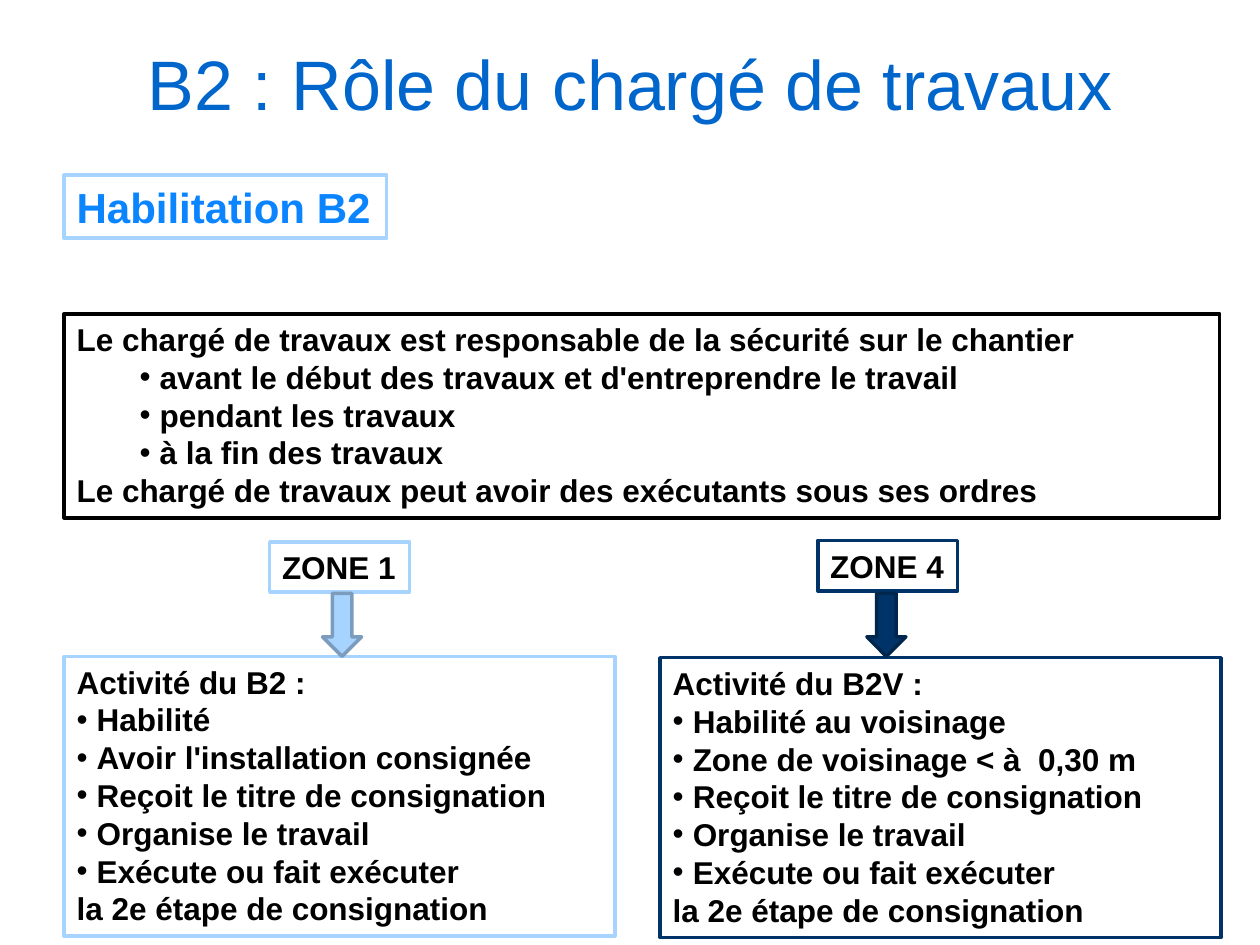
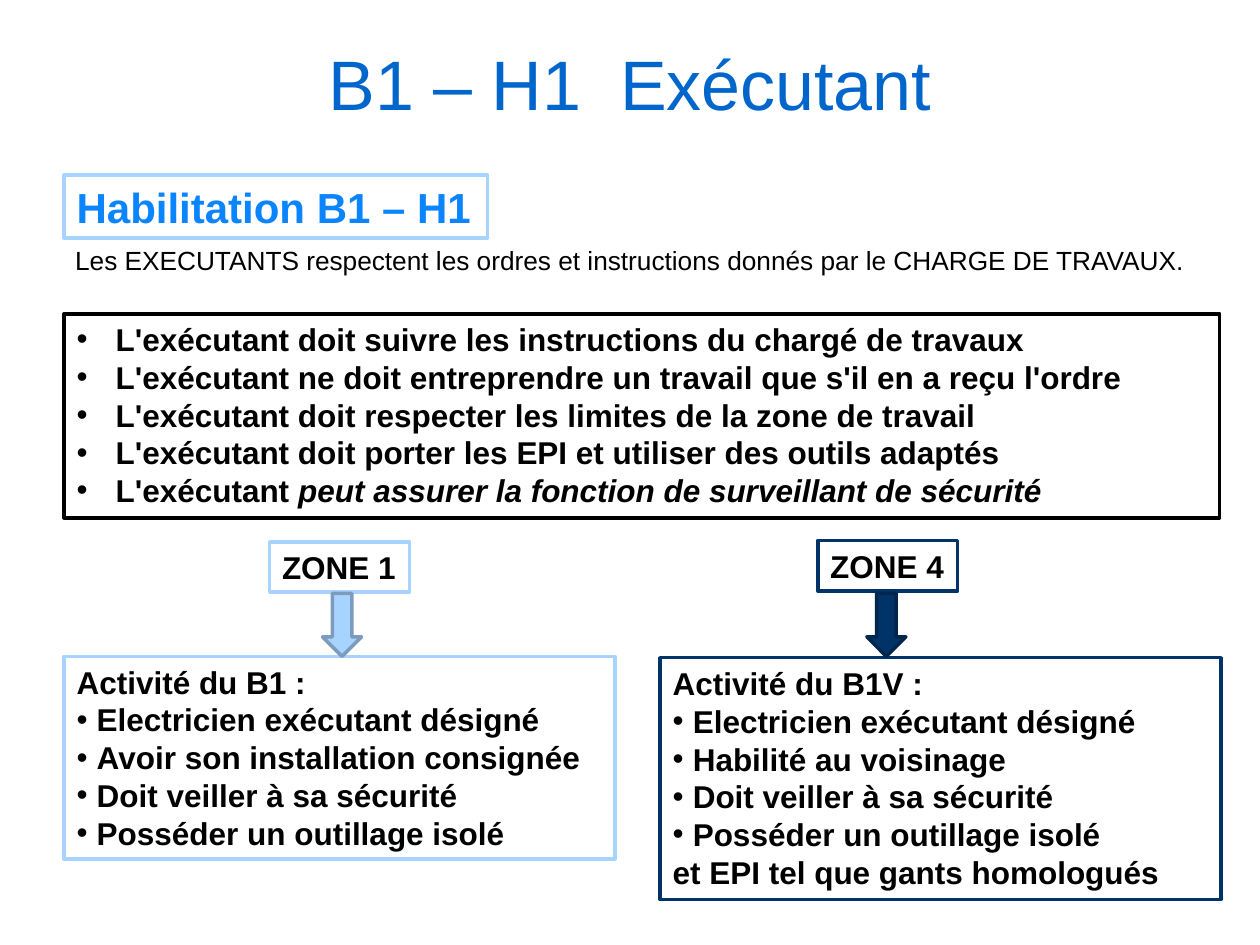
from lxml import etree
from pptx import Presentation
from pptx import util as u
from pptx.dml.color import RGBColor
from pptx.enum import shapes, text
from pptx.oxml import ns

COLORS = {
    "title": "0066CC", "heading": "0B85FF", "text": "000000", "fill": "FFFFFF",
    "zone1": "A7D3FF", "zone1_edge": "7C9CBD",
    "zone4": "003468", "zone4_edge": "00264D",
}
FONTS = {
    "title": {"size": u.Pt(40), "bold": False},
    "heading": {"size": u.Pt(24), "bold": True},
    "text": {"size": u.Pt(18), "bold": True},
    "note": {"size": u.Pt(15), "bold": False},
}
BULLETS = {"tight": (0.16, 0.16), "nested": (0.66, 0.16), "wide": (0.31, 0.31)}
LEFT, RIGHT = 0.51, 5.24
MIDDLE_LEFT = text.PP_ALIGN.LEFT


def rgb(name):
    return RGBColor.from_string(COLORS[name])


def apply(target, values):
    for name, value in values.items():
        setattr(target, name, value)


def place(sp, at):
    apply(sp, dict(zip(("left", "top", "width", "height"), map(u.Inches, at))))


def set_bullet(p, kind):
    pPr = p._p.get_or_add_pPr()
    margin, hanging = BULLETS.get(kind, (0, 0))
    pPr.set("marL", str(u.Inches(margin)))
    pPr.set("indent", str(-u.Inches(hanging)))
    if kind:
        etree.SubElement(pPr, ns.qn("a:buFont"), typeface="Arial")
        etree.SubElement(pPr, ns.qn("a:buChar"), char="•")
    else:
        etree.SubElement(pPr, ns.qn("a:buNone"))


def write(tf, lines, font="text", color="text", align=MIDDLE_LEFT):
    for i, (kind, *runs) in enumerate(lines):
        p = tf.paragraphs[0] if i == 0 else tf.add_paragraph()
        set_bullet(p, kind)
        apply(p, {"alignment": align, "space_before": u.Pt(0)})
        for n, content in enumerate(runs):
            r = p.add_run()
            r.text = content
            apply(r.font, {"name": "Arial", "italic": n > 0, **FONTS[font]})
            r.font.color.rgb = rgb(color)


def plain(content):
    return (None, content)


def listed(kind, *items):
    return [(kind, item) for item in items]


def shape(s, preset, at, fill, line):
    sp = s.shapes.add_shape(preset, *map(u.Inches, at))
    sp.shadow.inherit = False
    sp.fill.solid()
    sp.fill.fore_color.rgb = rgb(fill)
    sp.line.color.rgb = rgb(line)
    sp.line.width = u.Pt(2)
    return sp


def box(s, at, lines, line, font="text", color="text", wrap=True):
    sp = shape(s, shapes.MSO_SHAPE.RECTANGLE, at, "fill", line)
    tf = sp.text_frame
    apply(tf, {"word_wrap": wrap, "vertical_anchor": text.MSO_ANCHOR.TOP,
               "auto_size": text.MSO_AUTO_SIZE.SHAPE_TO_FIT_TEXT})
    write(tf, lines, font, color)


def add_slide(prs, layout, title, heading, heading_width, duties):
    s = prs.slides.add_slide(prs.slide_layouts[layout])
    place(s.shapes.title, (0.5, 0.08, 9, 1.15))
    tf = s.shapes.title.text_frame
    tf.vertical_anchor = text.MSO_ANCHOR.MIDDLE
    write(tf, [plain(title)], "title", "title", text.PP_ALIGN.CENTER)
    box(s, (LEFT, 1.39, heading_width, 0.5), [plain(heading)],
        "zone1", "heading", "heading", wrap=False)
    box(s, (LEFT, 2.49, 9.17, 1.62), duties, "text")
    return s


def note(s, content):
    sp = s.placeholders[1]
    place(sp, (0, 1.89, 10, 0.5))
    write(sp.text_frame, [plain(content)], "note", align=text.PP_ALIGN.CENTER)


def zone(s, number, label_at, arrow_left, activity_at, lines):
    name = f"zone{number}"
    height = 0.1 + 0.303 * len(lines)
    box(s, (*activity_at, round(height, 2)), lines, name)
    box(s, (*label_at, 1.11, 0.4), [plain(f"ZONE {number}")], name, wrap=False)
    shape(s, shapes.MSO_SHAPE.DOWN_ARROW, (arrow_left, 4.71, 0.31, 0.5),
          name, f"{name}_edge")


def zones(s, first, fourth):
    zone(s, 1, (2.14, 4.3), 2.56, (LEFT, 5.21, 4.37), first)
    zone(s, 4, (6.49, 4.29), 6.88, (RIGHT, 5.22, 4.45), fourth)


def charge_slide(prs):
    s = add_slide(prs, 5, "B2 : Rôle du chargé de travaux", "Habilitation B2", 2.56, [
        plain("Le chargé de travaux est responsable de la sécurité sur le chantier"),
        *listed("nested", "avant le début des travaux et d'entreprendre le travail",
                "pendant les travaux", "à la fin des travaux"),
        plain("Le chargé de travaux peut avoir des exécutants sous ses ordres"),
    ])
    shared = [
        *listed("tight", "Reçoit le titre de consignation", "Organise le travail",
                "Exécute ou fait exécuter"),
        plain("la 2e étape de consignation"),
    ]
    zones(s,
          [plain("Activité du B2 :"),
           *listed("tight", "Habilité", "Avoir l'installation consignée"), *shared],
          [plain("Activité du B2V :"),
           *listed("tight", "Habilité au voisinage", "Zone de voisinage < à  0,30 m"),
           *shared])


def executant_slide(prs):
    s = add_slide(prs, 1, "B1 – H1  Exécutant", "Habilitation B1 – H1", 3.36, [
        *listed("wide", "L'exécutant doit suivre les instructions du chargé de travaux",
                "L'exécutant ne doit entreprendre un travail que s'il en a reçu l'ordre",
                "L'exécutant doit respecter les limites de la zone de travail",
                "L'exécutant doit porter les EPI et utiliser des outils adaptés"),
        ("wide", "L'exécutant ", "peut assurer la fonction de surveillant de sécurité"),
    ])
    note(s, "Les EXECUTANTS respectent les ordres et instructions donnés "
            "par le CHARGE DE TRAVAUX.")
    designated = listed("tight", "Electricien exécutant désigné")
    shared = listed("tight", "Doit veiller à sa sécurité", "Posséder un outillage isolé")
    zones(s,
          [plain("Activité du B1 :"), *designated,
           *listed("tight", "Avoir son installation consignée"), *shared],
          [plain("Activité du B1V :"), *designated,
           *listed("tight", "Habilité au voisinage"), *shared,
           plain("et EPI tel que gants homologués")])


def main():
    prs = Presentation()
    apply(prs, {"slide_width": u.Inches(10), "slide_height": u.Inches(7.5)})
    charge_slide(prs)
    executant_slide(prs)
    prs.save("out.pptx")


if __name__ == "__main__":
    main()
